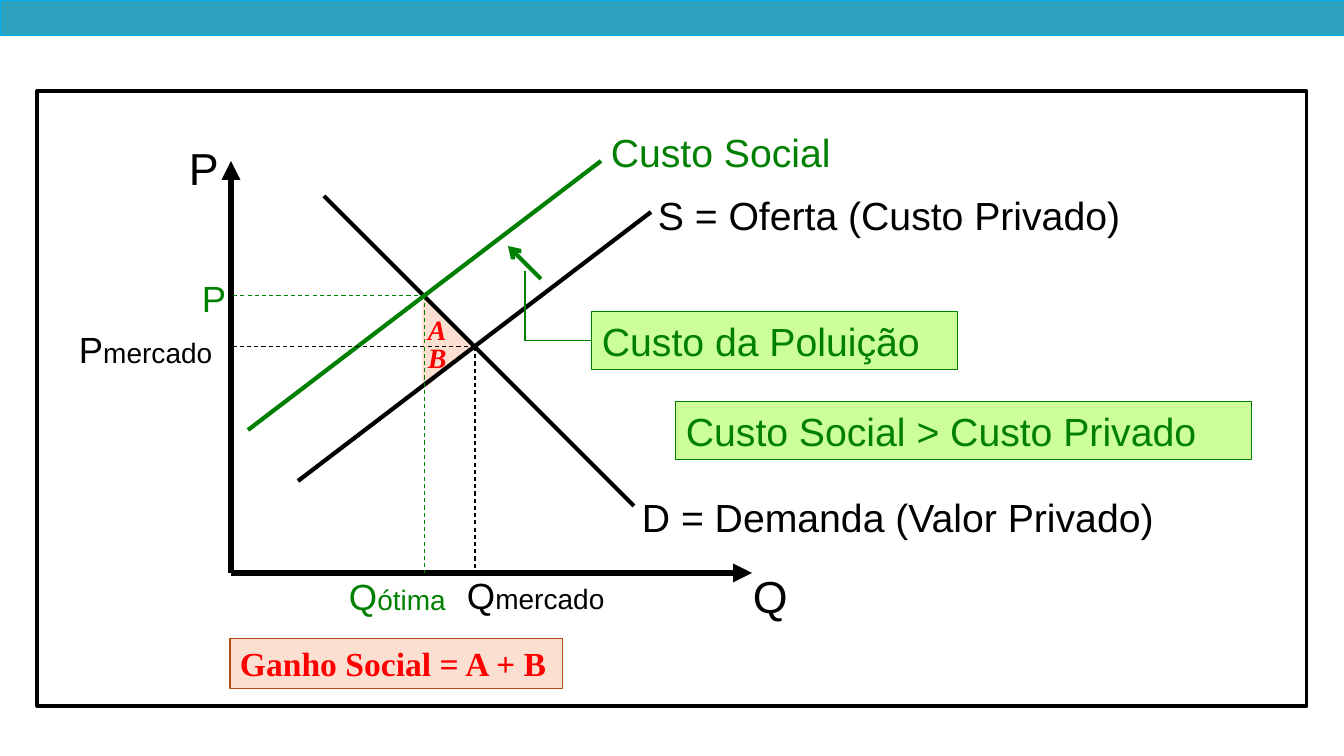
from collections import namedtuple
from lxml import etree
from pptx import Presentation
from pptx import util as u
from pptx.dml.color import RGBColor
from pptx.enum import dml, shapes, text
from pptx.oxml.ns import qn

PX = 914400 / 100.8
BLACK, GREEN, RED = "000000", "008000", "FF0000"
LIME, PEACH = "CCFF99", "FBE0D1"
SANS, SERIF = "Arial", "Times New Roman"

Box = namedtuple("Box", "left top width height")


def px(length):
    return u.Emu(round(length * PX))


def colour(hex_text):
    return RGBColor.from_string(hex_text)


def inside(area, left, top, width, height):
    return Box(area.left + left, area.top + top, width, height)


def shift(point, offset):
    return point[0] + offset[0], point[1] + offset[1]


def add_panel(page, box, fill, line, weight, kind=shapes.MSO_SHAPE.RECTANGLE):
    panel = page.shapes.add_shape(kind, *map(px, box))
    panel.shadow.inherit = False
    if fill:
        panel.fill.solid()
        panel.fill.fore_color.rgb = colour(fill)
    else:
        panel.fill.background()
    panel.line.color.rgb = colour(line)
    panel.line.width = u.Pt(weight)
    return panel


def write(shape, spans, ink, font=SANS, bold=False, italic=False):
    """Fill a shape with one left-aligned line of (wording, size) spans."""
    frame = shape.text_frame
    frame.word_wrap = True
    frame.vertical_anchor = text.MSO_ANCHOR.TOP
    para = frame.paragraphs[0]
    para.alignment = text.PP_ALIGN.LEFT
    for wording, size in spans:
        span = para.add_run()
        span.text = wording
        span.font.name = font
        span.font.size = u.Pt(size)
        span.font.bold = bold
        span.font.italic = italic
        span.font.color.rgb = colour(ink)


def add_label(page, box, spans, ink, **style):
    write(page.shapes.add_textbox(*map(px, box)), spans, ink, **style)


def add_line(page, area, start, end, ink, weight, dashed=False, head=None):
    ends = [px(value) for point in (start, end) for value in shift(point, area[:2])]
    line = page.shapes.add_connector(shapes.MSO_CONNECTOR.STRAIGHT, *ends)
    line.line.color.rgb = colour(ink)
    line.line.width = u.Pt(weight)
    if dashed:
        line.line.dash_style = dml.MSO_LINE.DASH
    if head:
        etree.SubElement(line.line._get_or_add_ln(), qn("a:tailEnd"), type=head)
    etree.SubElement(line._element.spPr, qn("a:effectLst"))
    return line


def draw_band(page, box):
    add_panel(page, box, "2DA2BF", "00B0F0", 0.5)


def draw_market(page, area):
    origin, market, to_social = (194, 482), (438, 256), (-50, -51)
    optimum = shift(market, to_social)
    supply = (261, 390), (614, 121)
    social = [shift(point, to_social) for point in supply]

    # Welfare triangle and frame
    gain = add_panel(page, inside(area, 370, 230, 82, 45), PEACH, PEACH, 4.33,
                     shapes.MSO_SHAPE.ISOSCELES_TRIANGLE)
    gain.rotation = 90
    add_panel(page, area, None, BLACK, 2.25)

    # Axes
    for tip in ((origin[0], 70), (715, origin[1])):
        add_line(page, area, origin, tip, BLACK, 4.5, head="triangle")

    # Curves
    add_line(page, area, (287, 105), (597, 415), BLACK, 3)
    add_line(page, area, *supply, BLACK, 3)
    add_line(page, area, *social, GREEN, 3)

    # Guides from each equilibrium to both axes
    for point, ink in ((market, BLACK), (optimum, GREEN)):
        for foot in ((point[0], origin[1]), (origin[0], point[1])):
            add_line(page, area, point, foot, ink, 0.75, dashed=True)

    # Axis, curve and quantity labels
    for place, spans, ink in (
        ((142, 45, 58, 65), [("P", 32)], BLACK),
        ((706, 473, 58, 65), [("Q", 32)], BLACK),
        ((611, 95, 516, 57), [("S = Oferta (Custo Privado)", 28)], BLACK),
        ((595, 397, 570, 57), [("D = Demanda (Valor Privado)", 28)], BLACK),
        ((420, 477, 168, 54), [("Q", 26), ("mercado", 20)], BLACK),
        ((32, 231, 185, 54), [("P", 26), ("mercado", 20)], BLACK),
        ((564, 32, 310, 57), [("Custo Social", 28)], GREEN),
        ((302, 478, 151, 54), [("Q", 26), ("ótima", 20)], GREEN),
        ((155, 180, 151, 54), [("P", 26)], GREEN),
    ):
        add_label(page, inside(area, *place), spans, ink)

    # Areas of the triangle
    for row, letter in enumerate("AB"):
        add_label(page, inside(area, 381, 217 + 28 * row, 26, 44), [(letter, 20)],
                  RED, font=SERIF, bold=True, italic=True)


def draw_notes(page, area):
    # Pollution cost, with its arrow and elbow leader
    add_line(page, area, (504, 188), (471, 155), GREEN, 3, head="arrow")
    pollution = add_panel(page, inside(area, 555, 221, 366, 58), LIME, GREEN, 0.75)
    write(pollution, [("Custo da Poluição", 28)], GREEN)
    corner = (488, 250)
    add_line(page, area, (488, 180), corner, GREEN, 0.75)
    leader = add_line(page, area, corner, (555, 250), GREEN, 0.75)
    leader.end_connect(pollution, 1)

    # Conclusions
    costs = add_panel(page, inside(area, 639, 311, 576, 58), LIME, GREEN, 0.75)
    write(costs, [("Custo Social > Custo Privado", 28)], GREEN)
    total = add_panel(page, inside(area, 193, 547, 333, 51), PEACH, "B54A10", 0.75)
    write(total, [("Ganho Social = A + B", 24)], RED, font=SERIF, bold=True)


def main():
    deck = Presentation()
    deck.slide_width, deck.slide_height = px(1344), px(756)
    page = deck.slides.add_slide(deck.slide_layouts[6])
    frame = Box(37, 91, 1270, 615)
    draw_band(page, Box(0, 0, 1344, 35))
    draw_market(page, frame)
    draw_notes(page, frame)
    deck.save("out.pptx")


if __name__ == "__main__":
    main()
